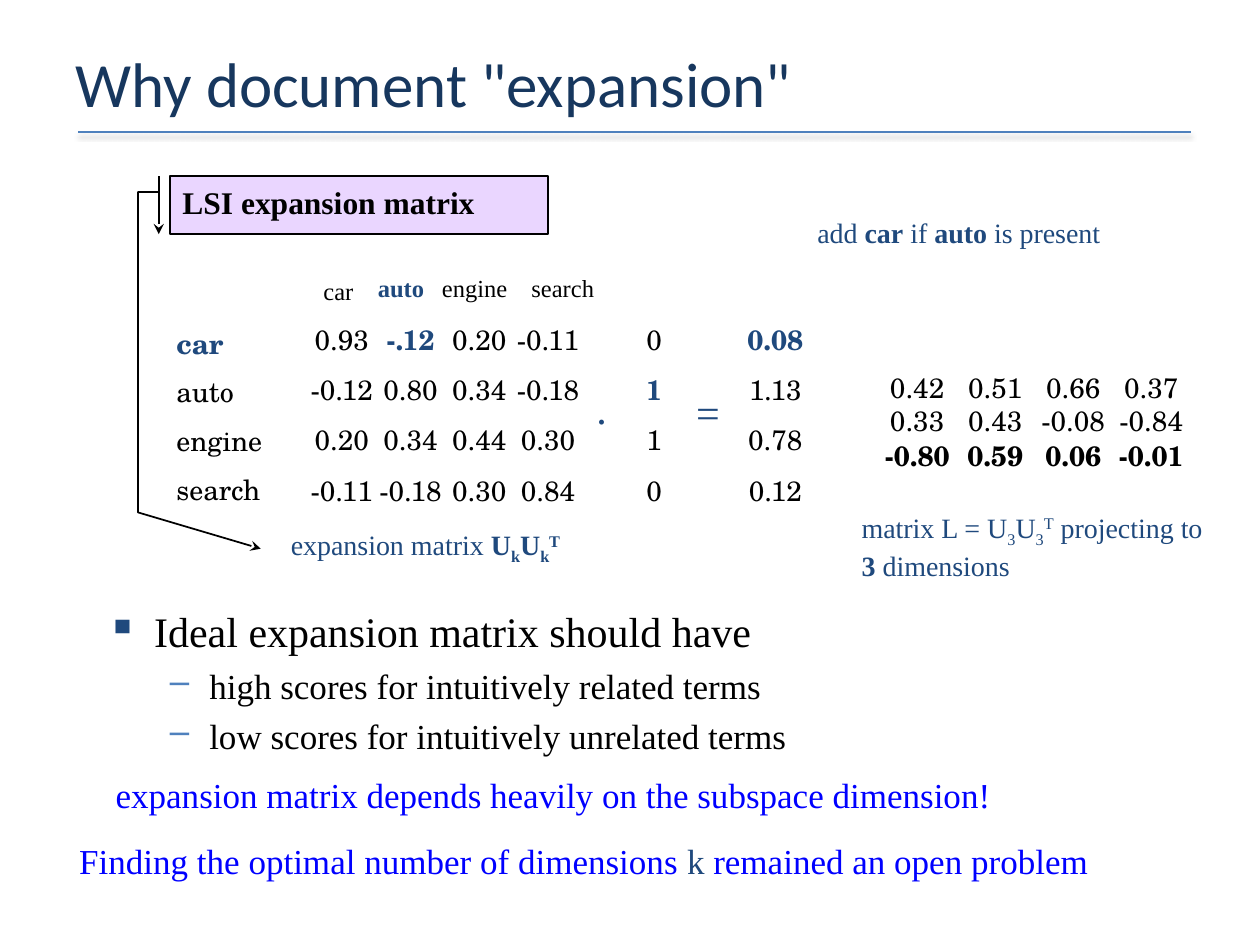
from lxml import etree
from pptx import Presentation
from pptx import util as u
from pptx.dml.color import RGBColor
from pptx.enum import shapes, text
from pptx.oxml import parse_xml
from pptx.oxml.ns import nsdecls, qn

Pt = u.Pt
COLORS = {
    "title": "17375E", "navy": "1F497D", "accent": "4F81BD",
    "black": "000000", "blue": "0000FF", "lilac": "CC99FF",
}
SERIF, MATRIX = "Times New Roman", "TeX Gyre Schola"
CENTER, MIDDLE = text.PP_ALIGN.CENTER, text.MSO_ANCHOR.MIDDLE


def write(para, spans, size, color, font=SERIF):
    """Add runs; a span is (words, marks), marks being bold, sub, sup or a colour name."""
    for words, *marks in spans:
        span = para.add_run()
        span.text = words
        span.font.size, span.font.name = Pt(size), font
        span.font.bold = "bold" in marks
        shade = next((mark for mark in marks if mark in COLORS), color)
        span.font.color.rgb = RGBColor.from_string(COLORS[shade])
        for mark, baseline in (("sub", "-25000"), ("sup", "30000")):
            if mark in marks:
                span._r.get_or_add_rPr().set("baseline", baseline)


def add_matrix(left, top, column_width, row_height, rows, marked, centered=True):
    """Add an unfilled table; marked maps (row, column) to the marks of that cell."""
    width, height = column_width * len(rows[0]), row_height * len(rows)
    table = page.shapes.add_table(len(rows), len(rows[0]), Pt(left), Pt(top),
                                  Pt(width), Pt(height)).table
    table.first_row = table.horz_banding = False
    for r, row in enumerate(rows):
        table.rows[r].height = Pt(row_height)
        for c, value in enumerate(row):
            cell = table.cell(r, c)
            cell.fill.background()
            para = cell.text_frame.paragraphs[0]
            para.space_before = Pt(3.7)
            if centered:
                cell.margin_left = cell.margin_right = 0
                cell.margin_top = cell.margin_bottom = 0
                cell.vertical_anchor = MIDDLE
                para.alignment = CENTER
            write(para, [(value, *marked.get((r, c), ()))], 16, "black", MATRIX)


deck = Presentation()
deck.slide_width, deck.slide_height = Pt(720), Pt(540)
page = deck.slides.add_slide(deck.slide_layouts[6])

# Title and its rule
rule = page.shapes.add_connector(shapes.MSO_CONNECTOR.STRAIGHT,
                                 Pt(44.6), Pt(75.6), Pt(680.4), Pt(75.6))
rule.line.color.rgb = RGBColor.from_string(COLORS["accent"])
rule.line.width = Pt(1)
rule._element.spPr.append(parse_xml(
    f'<a:effectLst {nsdecls("a")}><a:outerShdw blurRad="{Pt(3.1)}" dist="{Pt(1.6)}" '
    f'dir="5400000" rotWithShape="0"><a:srgbClr val="{COLORS["black"]}">'
    '<a:alpha val="38000"/></a:srgbClr></a:outerShdw></a:effectLst>'))
title = page.shapes.add_textbox(Pt(36), Pt(21.6), Pt(648), Pt(51))
title.text_frame.word_wrap = True
title.text_frame.vertical_anchor = MIDDLE
write(title.text_frame.paragraphs[0], [('Why document "expansion"',)],
      36, "title", "Calibri")

# Matrix product: terms, expansion matrix, document, expanded document
terms = ["car", "auto", "engine", "search"]
highlight = ("navy", "bold")
expansion = [
    ["0.93", "-.12", "0.20", "-0.11"],
    ["-0.12", "0.80", "0.34", "-0.18"],
    ["0.20", "0.34", "0.44", "0.30"],
    ["-0.11", "-0.18", "0.30", "0.84"],
]
projection = [
    ["0.42", "0.51", "0.66", "0.37"],
    ["0.33", "0.43", "-0.08", "-0.84"],
    ["-0.80", "0.59", "0.06", "-0.01"],
]
add_matrix(175.7, 179.3, 39.3, 28.8, expansion, {(0, 1): highlight})
add_matrix(93.6, 180, 72.7, 28.2, [[term] for term in terms],
           {(0, 0): highlight}, centered=False)
add_matrix(354.2, 179.3, 39.3, 28.8, [["0"], ["1"], ["1"], ["0"]], {(1, 0): highlight})
add_matrix(423.4, 179.3, 39.3, 28.8, [["0.08"], ["1.13"], ["0.78"], ["0.12"]],
           {(0, 0): highlight})
add_matrix(501.8, 209.5, 44.6, 19, projection, {(2, c): ("bold",) for c in range(4)})

# Labels: left, top, width, height, size, colour, centred, wrapped, spans
labels = [
    (458.6, 119.5, 178.6, 26.6, 16, "navy", True, False,
     [("add ",), ("car", "bold"), (" if ",), ("auto", "bold"), (" is present",)]),
    (332.6, 221.8, 22.3, 36, 24, "navy", True, False, [("·",)]),
    (390.2, 217.4, 28.8, 36, 24, "navy", True, False, [("=",)]),
    (159.1, 298.1, 172.8, 26.6, 16, "navy", False, False,
     [("expansion matrix ",), ("U", "bold"), ("k", "bold", "sub"), ("U", "bold"),
      ("k", "bold", "sub"), ("T", "bold", "sup")]),
    (485.3, 288, 214.6, 46, 16, "navy", False, True,
     [("matrix L = U",), ("3", "sub"), ("U",), ("3", "sub"), ("T", "sup"),
      (" projecting to ",), ("3", "bold"), (" dimensions",)]),
    (177.8, 154.1, 31.7, 24.5, 14, "black", False, False, [(terms[0],)]),
    (208.8, 152.6, 41, 24.5, 14, "navy", False, False, [(terms[1], "bold")]),
    (245.5, 152.3, 52.6, 24.5, 14, "black", False, False, [(terms[2],)]),
    (296.6, 152.6, 51.1, 24.5, 14, "black", False, False, [(terms[3],)]),
    (59, 436.3, 518.4, 33.8, 20, "blue", False, False,
     [("expansion matrix depends heavily on the subspace dimension!",)]),
    (38.2, 475.9, 662.4, 31, 20, "blue", False, True,
     [("Finding the optimal number of dimensions ",), ("k", "navy"),
      (" remained an open problem",)]),
]
for left, top, width, height, size, color, centered, wrapped, spans in labels:
    box = page.shapes.add_textbox(Pt(left), Pt(top), Pt(width), Pt(height))
    box.text_frame.word_wrap = wrapped
    para = box.text_frame.paragraphs[0]
    if centered:
        para.alignment = CENTER
    if size == 20 and not wrapped:
        para.line_spacing = 1.1
    write(para, spans, size, color)

# Callout pointing at the expansion matrix
callout = page.shapes.add_shape(shapes.MSO_SHAPE.LINE_CALLOUT_3_BORDER_AND_ACCENT_BAR,
                                Pt(97.2), Pt(100.8), Pt(216), Pt(33))
for i, value in enumerate([0.27, -0.03, 0.27, -0.085, 5.82, -0.085, 6.45, 0.24]):
    callout.adjustments[i] = value
callout.shadow.inherit = False
callout.fill.solid()
callout.fill.fore_color.rgb = RGBColor.from_string(COLORS["lilac"])
fill_color = callout._element.spPr.find(qn("a:solidFill"))[0]
etree.SubElement(fill_color, qn("a:alpha"), val="40000")
callout.line.color.rgb = RGBColor.from_string(COLORS["black"])
callout.line.width = Pt(1)
etree.SubElement(callout.line._get_or_add_ln(), qn("a:tailEnd"), type="stealth")
callout.text_frame.vertical_anchor = text.MSO_ANCHOR.TOP
callout.text_frame.word_wrap = True
para = callout.text_frame.paragraphs[0]
para.alignment = text.PP_ALIGN.LEFT
write(para, [("LSI expansion matrix", "bold")], 18, "black")

# Bulleted conclusions: level, size, margin, indent, bullet, bullet colour, words
points = [
    (0, 24, 27, -27, "▪", "navy", "Ideal expansion matrix should have"),
    (1, 20, 58.5, -22.5, "–", "accent", "high scores for intuitively related terms"),
    (1, 20, 58.5, -22.5, "–", "accent", "low scores for intuitively unrelated terms"),
]
body = page.shapes.add_textbox(Pt(54), Pt(342.7), Pt(632.9), Pt(111.6))
frame = body.text_frame
frame.word_wrap = True
for i, (level, size, margin, indent, bullet, color, words) in enumerate(points):
    para = frame.add_paragraph() if i else frame.paragraphs[0]
    para.level = level
    para.space_before = Pt(round(size * 0.23, 1))
    props = para._p.get_or_add_pPr()
    props.set("marL", str(Pt(margin)))
    props.set("indent", str(Pt(indent)))
    bullet_color = etree.SubElement(props, qn("a:buClr"))
    etree.SubElement(bullet_color, qn("a:srgbClr"), val=COLORS[color])
    etree.SubElement(props, qn("a:buChar"), char=bullet)
    write(para, [(words,)], size, "black")

deck.save("out.pptx")
